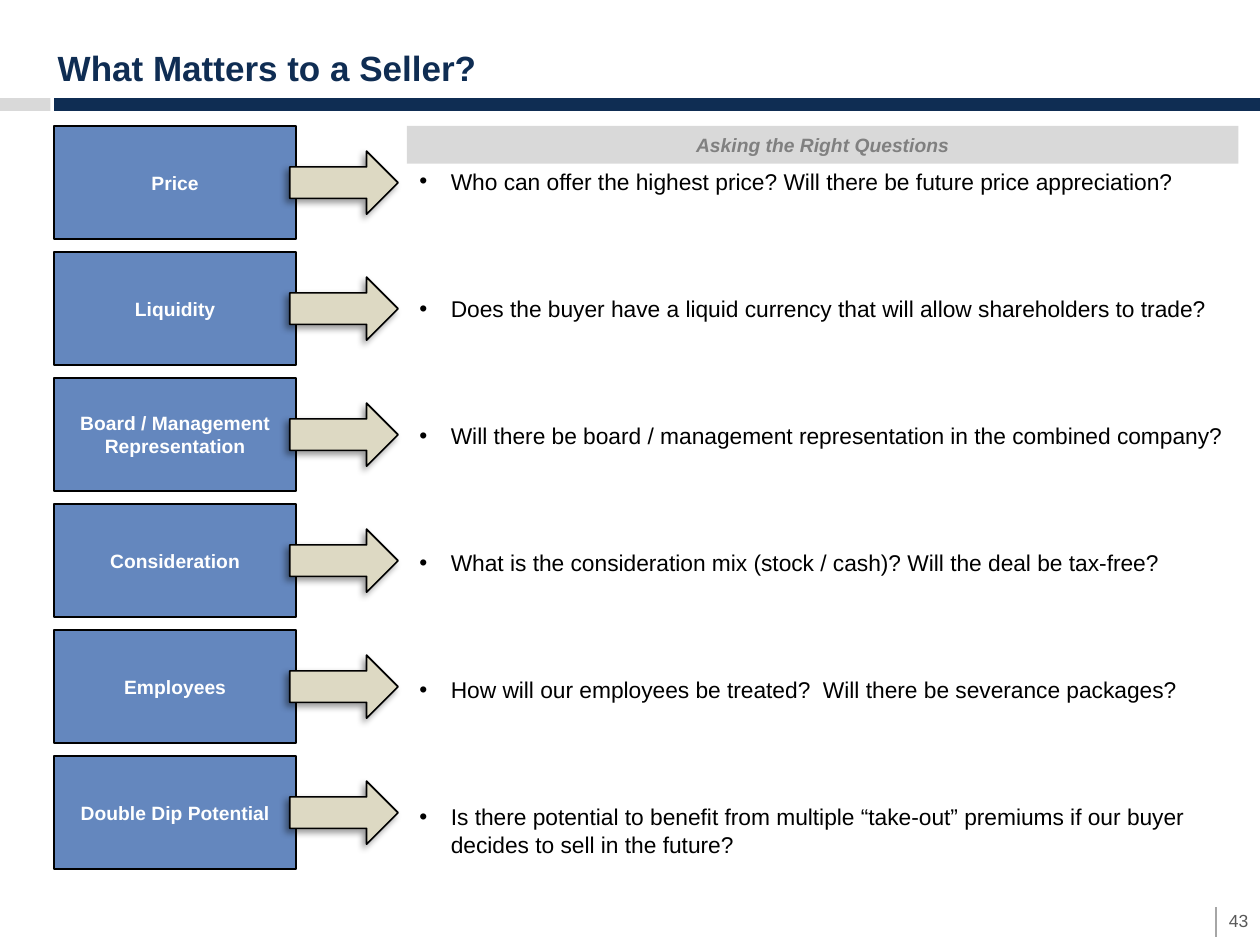
from lxml.etree import SubElement
from pptx import Presentation
from pptx.dml.color import RGBColor
from pptx.enum.shapes import MSO_CONNECTOR, MSO_SHAPE
from pptx.enum.text import MSO_ANCHOR, PP_ALIGN
from pptx.oxml.ns import qn
from pptx.util import Inches, Pt

NAVY = RGBColor(0x0F, 0x2D, 0x53)
BLUE = RGBColor(0x64, 0x87, 0xBE)
TAN = RGBColor(0xDD, 0xD9, 0xC3)
LIGHT_GRAY = RGBColor(0xD9, 0xD9, 0xD9)
RULE_GRAY = RGBColor(0xA6, 0xA6, 0xA6)
HEADING_GRAY = RGBColor(0x80, 0x80, 0x80)
NUMBER_GRAY = RGBColor(0x59, 0x59, 0x59)
BLACK = RGBColor(0, 0, 0)
WHITE = RGBColor(0xFF, 0xFF, 0xFF)

CONCERNS = [
    ("Price", "Who can offer the highest price? Will there be future price appreciation?"),
    ("Liquidity", "Does the buyer have a liquid currency that will allow shareholders to trade?"),
    ("Board / Management Representation",
     "Will there be board / management representation in the combined company?"),
    ("Consideration", "What is the consideration mix (stock / cash)? Will the deal be tax-free?"),
    ("Employees", "How will our employees be treated?  Will there be severance packages?"),
    ("Double Dip Potential",
     "Is there potential to benefit from multiple “take-out” premiums "
     "if our buyer decides to sell in the future?"),
]
FIRST_ROW = 1
ROW_PITCH = 1


def style(paragraph, size, color, bold=False, italic=False, align=PP_ALIGN.LEFT):
    paragraph.alignment = align
    font = paragraph.font
    font.name = "Arial"
    font.size = Pt(size)
    font.bold = bold
    font.italic = italic
    font.color.rgb = color


def add_block(slide, preset, left, top, width, height, fill, outlined=False):
    block = slide.shapes.add_shape(
        preset, Inches(left), Inches(top), Inches(width), Inches(height))
    block.shadow.inherit = False
    block.fill.solid()
    block.fill.fore_color.rgb = fill
    if outlined:
        block.line.color.rgb = BLACK
        block.line.width = Pt(1)
    else:
        block.line.fill.background()
    return block


def add_label(block, text, color, italic=False):
    frame = block.text_frame
    frame.word_wrap = True
    frame.vertical_anchor = MSO_ANCHOR.MIDDLE
    frame.text = text
    style(frame.paragraphs[0], 11, color, bold=True, italic=italic, align=PP_ALIGN.CENTER)


def add_text_frame(slide, left, top, width, height, anchor=MSO_ANCHOR.TOP):
    frame = slide.shapes.add_textbox(
        Inches(left), Inches(top), Inches(width), Inches(height)).text_frame
    frame.word_wrap = True
    frame.vertical_anchor = anchor
    return frame


def add_arrow(slide, top):
    arrow = add_block(slide, MSO_SHAPE.RIGHT_ARROW, 2.3, top, 0.86, 0.5, TAN, outlined=True)
    effects = arrow._element.spPr.find(qn("a:effectLst"))
    shadow = SubElement(effects, qn("a:outerShdw"), blurRad=str(Pt(4)), dist=str(Pt(3)),
                        dir=str(135 * 60000), algn="tr", rotWithShape="0")
    shade = SubElement(shadow, qn("a:srgbClr"), val=str(BLACK))
    SubElement(shade, qn("a:alpha"), val="40000")


def add_questions(slide, questions):
    frame = add_text_frame(slide, 3.23, 1.28, 6.6, 0.45)
    for index, question in enumerate(questions):
        paragraph = frame.add_paragraph() if index else frame.paragraphs[0]
        paragraph.text = question
        if index:
            paragraph.space_before = Pt(57)
        properties = paragraph._p.get_or_add_pPr()
        properties.set("marL", str(Inches(0.25)))
        properties.set("indent", str(Inches(-0.25)))
        SubElement(properties, qn("a:buFont"), typeface="Arial")
        SubElement(properties, qn("a:buChar"), char="•")
        style(paragraph, 13, BLACK)


def add_title(slide, text):
    frame = add_text_frame(slide, 0.36, 0.25, 9, 0.5, MSO_ANCHOR.BOTTOM)
    frame.text = text
    style(frame.paragraphs[0], 20, NAVY, bold=True)


def add_page_number(slide, number):
    rule = slide.shapes.add_connector(
        MSO_CONNECTOR.STRAIGHT, Inches(9.65), Inches(7.2), Inches(9.65), Inches(7.44))
    rule.line.color.rgb = RULE_GRAY
    rule.line.width = Pt(1.25)
    SubElement(rule._element.spPr, qn("a:effectLst"))
    frame = add_text_frame(slide, 9.6, 7.11, 0.46, 0.4, MSO_ANCHOR.MIDDLE)
    frame.text = number
    style(frame.paragraphs[0], 10, NUMBER_GRAY, align=PP_ALIGN.CENTER)


def main():
    deck = Presentation()
    deck.slide_width = Inches(10)
    deck.slide_height = Inches(7.5)
    slide = deck.slides.add_slide(deck.slide_layouts[6])

    add_block(slide, MSO_SHAPE.RECTANGLE, 0, 0.78, 0.4, 0.1, LIGHT_GRAY)
    add_block(slide, MSO_SHAPE.RECTANGLE, 0.43, 0.78, 9.57, 0.1, NAVY)
    add_questions(slide, [question for _, question in CONCERNS])
    add_title(slide, "What Matters to a Seller?")
    add_page_number(slide, "43")

    for row, (concern, _) in enumerate(CONCERNS):
        top = FIRST_ROW + row * ROW_PITCH
        box = add_block(slide, MSO_SHAPE.RECTANGLE, 0.43, top, 1.92, 0.9, BLUE, outlined=True)
        add_label(box, concern, WHITE)
        add_arrow(slide, top + 0.2)

    heading = add_block(slide, MSO_SHAPE.RECTANGLE, 3.23, FIRST_ROW, 6.6, 0.3, LIGHT_GRAY)
    add_label(heading, "Asking the Right Questions", HEADING_GRAY, italic=True)

    deck.save("out.pptx")


if __name__ == "__main__":
    main()
